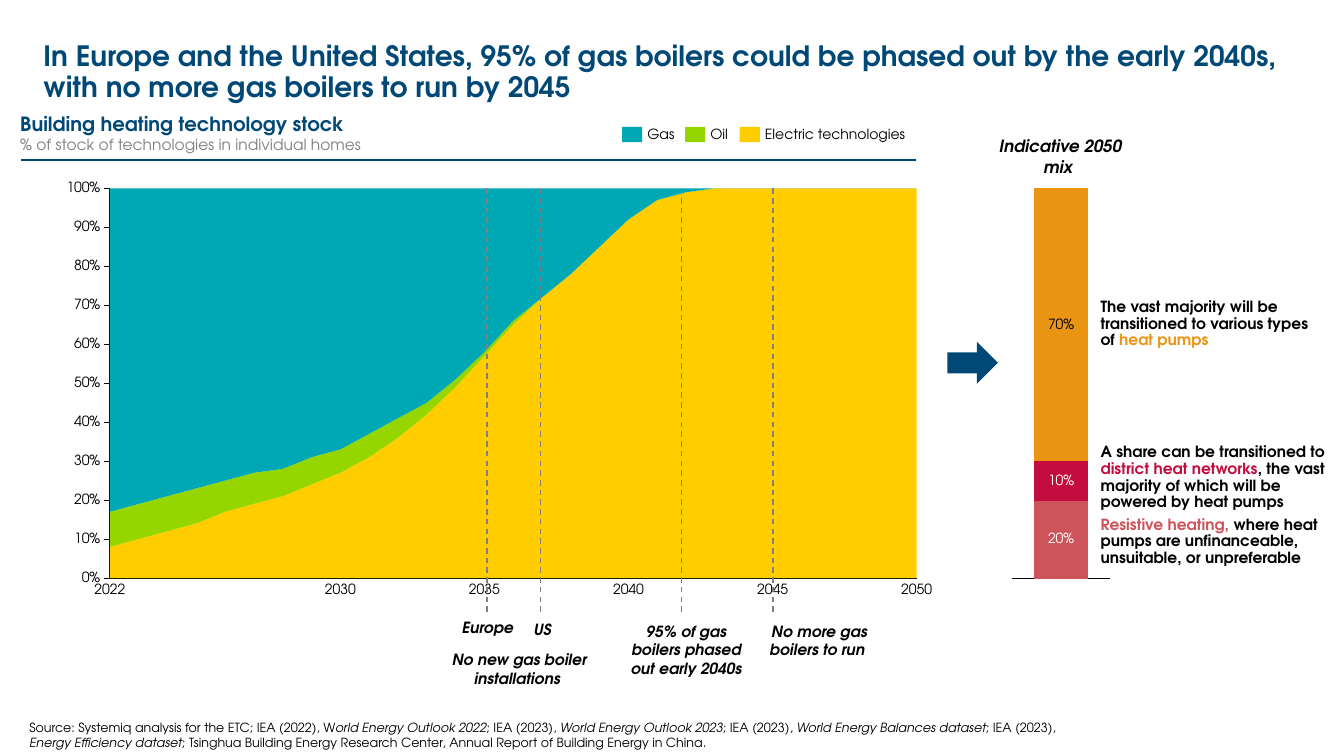
import dataclasses

import lxml.etree
import pptx
import pptx.chart.data
import pptx.dml.color
import pptx.enum.chart
import pptx.enum.dml
import pptx.enum.shapes
import pptx.enum.text
import pptx.oxml.ns
import pptx.util

Pt = pptx.util.Pt
qn = pptx.oxml.ns.qn
ALIGN = pptx.enum.text.PP_ALIGN
ANCHOR = pptx.enum.text.MSO_ANCHOR
SHAPE = pptx.enum.shapes.MSO_SHAPE
CHART = pptx.enum.chart.XL_CHART_TYPE
TICK = pptx.enum.chart.XL_TICK_MARK


@dataclasses.dataclass(frozen=True)
class Theme:
    font: str = "TeX Gyre Adventor"
    navy: str = "004876"
    black: str = "000000"
    white: str = "FFFFFF"
    grey: str = "808080"
    gas: str = "00A7B5"
    oil: str = "95D600"
    power: str = "FFCD00"
    resist: str = "CD545B"
    district: str = "C30C3E"
    pump: str = "EA9413"
    title: int = 20
    head: int = 14
    mix: int = 12
    note: int = 11
    label: int = 10
    source: int = 9


T = Theme()
YEARS = range(2022, 2051)
POWER = [8, 10, 12, 14, 17, 19, 21, 24, 27, 31, 36, 42, 49, 57, 65,
         72, 78, 85, 92, 97, 99] + [100] * 8
OIL = [9, 9, 9, 9, 8, 8, 7, 7, 6, 6, 5, 3, 2, 1, 1] + [0] * 14
GAS = [100 - power - oil for power, oil in zip(POWER, OIL)]


def rgb(code):
    return pptx.dml.color.RGBColor.from_string(code)


def style(font, size, color=T.black, bold=False, italic=False):
    font.name, font.size = T.font, Pt(size)
    font.bold, font.italic = bold, italic
    font.color.rgb = rgb(color)


def write(frame, paras, size, color=T.black, bold=False, italic=False,
          align=ALIGN.LEFT, anchor=ANCHOR.TOP, wrap=True, gap=1.0):
    """Fill a frame; each paragraph is a list of (text, changed styles) runs."""
    frame.margin_left = frame.margin_right = 0
    frame.margin_top = frame.margin_bottom = 0
    frame.auto_size = pptx.enum.text.MSO_AUTO_SIZE.NONE
    frame.word_wrap, frame.vertical_anchor = wrap, anchor
    base = dict(size=size, color=color, bold=bold, italic=italic)
    for i, runs in enumerate(paras):
        para = frame.add_paragraph() if i else frame.paragraphs[0]
        para.alignment, para.line_spacing = align, gap
        for words, change in runs:
            run = para.add_run()
            run.text = words
            style(run.font, **{**base, **change})


def text(slide, box, paras, size, **look):
    if isinstance(paras, str):
        paras = [[(paras, {})]]
    frame = slide.shapes.add_textbox(*map(Pt, box)).text_frame
    write(frame, paras, size, **look)


def block(slide, box, color, kind=SHAPE.RECTANGLE):
    shape = slide.shapes.add_shape(kind, *map(Pt, box))
    shape.shadow.inherit = False
    shape.fill.solid()
    shape.fill.fore_color.rgb = rgb(color)
    shape.line.fill.background()
    return shape


def rule(slide, ends, color, width, dash=False):
    line = slide.shapes.add_connector(
        pptx.enum.shapes.MSO_CONNECTOR.STRAIGHT, *map(Pt, ends))
    line.line.color.rgb, line.line.width = rgb(color), Pt(width)
    if dash:
        line.line.dash_style = pptx.enum.dml.MSO_LINE.DASH
    lxml.etree.SubElement(line.element.spPr, qn("a:effectLst"))


def frame_plot(chart, area):
    """Fix the inner plot area as fractions of the chart box."""
    plot = chart.element.find(".//" + qn("c:plotArea"))
    for old in plot.findall(qn("c:layout")):
        plot.remove(old)
    layout = lxml.etree.Element(qn("c:layout"))
    plot.insert(0, layout)
    manual = lxml.etree.SubElement(layout, qn("c:manualLayout"))
    items = [("layoutTarget", "inner"), ("xMode", "edge"), ("yMode", "edge")]
    for tag, val in items + list(zip("xywh", map(str, area))):
        lxml.etree.SubElement(manual, qn("c:" + tag)).set("val", val)


def graph(slide, box, kind, cats, series, area):
    """Add a stacked chart of (name, values, color) series on a 0-100 scale."""
    data = pptx.chart.data.CategoryChartData()
    data.categories = cats
    for name, vals, _ in series:
        data.add_series(name, vals)
    chart = slide.shapes.add_chart(kind, *map(Pt, box), data).chart
    chart.has_legend = chart.has_title = False
    style(chart.font, T.label)
    chart.plots[0].vary_by_categories = False
    for item, (_, _, color) in zip(chart.plots[0].series, series):
        item.format.fill.solid()
        item.format.fill.fore_color.rgb = rgb(color)
    frame_plot(chart, area)
    cat, val = chart.category_axis, chart.value_axis
    cat.tick_label_position = pptx.enum.chart.XL_TICK_LABEL_POSITION.NONE
    cat.major_tick_mark = cat.minor_tick_mark = TICK.NONE
    val.minimum_scale, val.maximum_scale, val.major_unit = 0, 100, 10
    cat.has_major_gridlines = val.has_major_gridlines = False
    for axis in (cat, val):
        axis.format.line.color.rgb = rgb(T.black)
        axis.format.line.width = Pt(0.75)
    return chart


def header(slide, box):
    x, y, w, h = box
    title = slide.shapes.title
    title.left, title.top, title.width, title.height = map(
        Pt, (x + 16.6, y, w - 13, 56))
    write(title.text_frame, [[(
        "In Europe and the United States, 95% of gas boilers could be phased "
        "out by the early 2040s, with no more gas boilers to run by 2045",
        {})]], T.title, color=T.navy, bold=True, anchor=ANCHOR.MIDDLE, gap=0.9)
    text(slide, (x, y + 56, w, 30), [
        [("Building heating technology stock", {})],
        [("% of stock of technologies in individual homes",
          dict(size=T.note, color=T.grey, bold=False))]],
        T.head, color=T.navy, bold=True)
    rule(slide, (x + 0.7, y + h, x + 640, y + h), T.navy, 1.5)
    for left, words, color in ((430, "Gas", T.gas), (475, "Oil", T.oil),
                               (514, "Electric technologies", T.power)):
        block(slide, (x + left, y + 66.7, 14.4, 10.8), color)
        text(slide, (x + left + 18, y + 66.7, 104, 10.8), words, T.label,
             anchor=ANCHOR.MIDDLE, wrap=False, gap=0.9)


def stock(slide, box):
    x, y, w, h = box
    area = (0.068, 0.04, 0.922, 0.919)
    chart = graph(slide, box, CHART.AREA_STACKED,
                  [str(n) for n in range(1, len(YEARS) + 1)],
                  (("Series 1", POWER, T.power), ("Series 2", OIL, T.oil),
                   ("Series 3", GAS, T.gas)), area)
    val = chart.value_axis
    val.major_tick_mark, val.minor_tick_mark = TICK.OUTSIDE, TICK.NONE
    val.tick_labels.number_format = '#,##0"%";"-"#,##0"%"'
    val.tick_labels.number_format_is_linked = False
    style(val.tick_labels.font, T.label)
    cross = chart.element.find(".//" + qn("c:valAx") + "/" + qn("c:crossBetween"))
    cross.set("val", "midCat")

    left, top = x + area[0] * w, y + area[1] * h
    step = area[2] * w / (len(YEARS) - 1)
    for year in (2022, 2030, 2035, 2040, 2045, 2050):
        mid = left + (year - YEARS[0]) * step
        text(slide, (mid - 11.5, y + 293.8, 23, 10.8), str(year), T.label,
             align=ALIGN.CENTER, wrap=False, gap=0.9)
    for mark in (311.8, 350, 450.7, 516.2):
        rule(slide, (x + mark, top, x + mark, y + 314.6), T.grey, 1, True)
    for dx, dy, wide, high, words in (
            (289.4, 319, 46, 13.5, "Europe"), (340, 320.4, 23, 13.5, "US"),
            (285.8, 342, 98.6, 27, "No new gas boiler installations "),
            (409, 321.8, 90.7, 40, "95% of gas boilers phased out early 2040s"),
            (504, 321.8, 90.7, 27, "No more gas boilers to run ")):
        text(slide, (x + dx, y + dy, wide, high), words, T.note, bold=True,
             italic=True, align=ALIGN.CENTER)


def mix(slide, box):
    x, y, w, h = box
    chart = graph(slide, box, CHART.COLUMN_STACKED, ["1"],
                  (("Series 1", [20], T.resist), ("Series 2", [10], T.district),
                   ("Series 3", [70], T.pump)), (0.283, 0.061, 0.435, 0.878))
    chart.value_axis.visible = False
    plot = chart.plots[0]
    plot.gap_width, plot.overlap = 80, 100
    for item, color in zip(plot.series, (T.white, T.white, T.black)):
        tags = item.data_labels
        tags.show_value = True
        tags.number_format, tags.number_format_is_linked = '0"%"', False
        style(tags.font, T.label, color)
    block(slide, (x, y + 129, 36, 30), T.navy, SHAPE.RIGHT_ARROW)
    text(slide, (x + 26, y - 18, 109.4, 29), "Indicative 2050 mix ", T.mix,
         bold=True, italic=True, align=ALIGN.CENTER)
    for dy, high, paras in (
            (98.6, 35.3, [[("The vast majority will be", {})],
                          [("transitioned to various types", {})],
                          [("of ", {}), ("heat pumps", dict(color=T.pump))]]),
            (202.3, 47.5, [[("A share can be transitioned to", {})],
                           [("district heat networks", dict(color=T.district)),
                            (", the vast", {})],
                           [("majority of which will be", {})],
                           [("powered by heat pumps", {})]]),
            (254.2, 35.3, [[("Resistive heating, ", dict(color=T.resist)),
                            ("where heat", {})],
                           [("pumps are unfinanceable,", {})],
                           [("unsuitable, or unpreferable", {})]])):
        text(slide, (x + 109.4, y + dy, 163, high), paras, T.note, bold=True,
             anchor=ANCHOR.MIDDLE, wrap=False, gap=0.9)


def source(slide, box):
    slant = dict(italic=True)
    write(block(slide, box, T.white).text_frame, [
        [("Source: Systemiq analysis for the ETC; IEA (2022), W", {}),
         ("orld Energy Outlook 2022", slant), ("; IEA (2023), ", {}),
         ("World Energy Outlook 2023", slant), ("; IEA (2023), ", {}),
         ("World Energy Balances dataset", slant), ("; IEA (2023),", {})],
        [("Energy Efficiency dataset", slant),
         ("; Tsinghua Building Energy Research Center, Annual Report of "
          "Building Energy in China.", {})]], T.source, anchor=ANCHOR.BOTTOM)


def main():
    deck = pptx.Presentation()
    deck.slide_width, deck.slide_height = Pt(960), Pt(540)
    slide = deck.slides.add_slide(deck.slide_layouts[5])
    source(slide, (21, 497, 928, 39))
    header(slide, (14.4, 24, 932, 90))
    stock(slide, (36, 122.4, 625, 303))
    mix(slide, (676.8, 115.2, 162, 317.5))
    deck.save("out.pptx")


if __name__ == "__main__":
    main()
